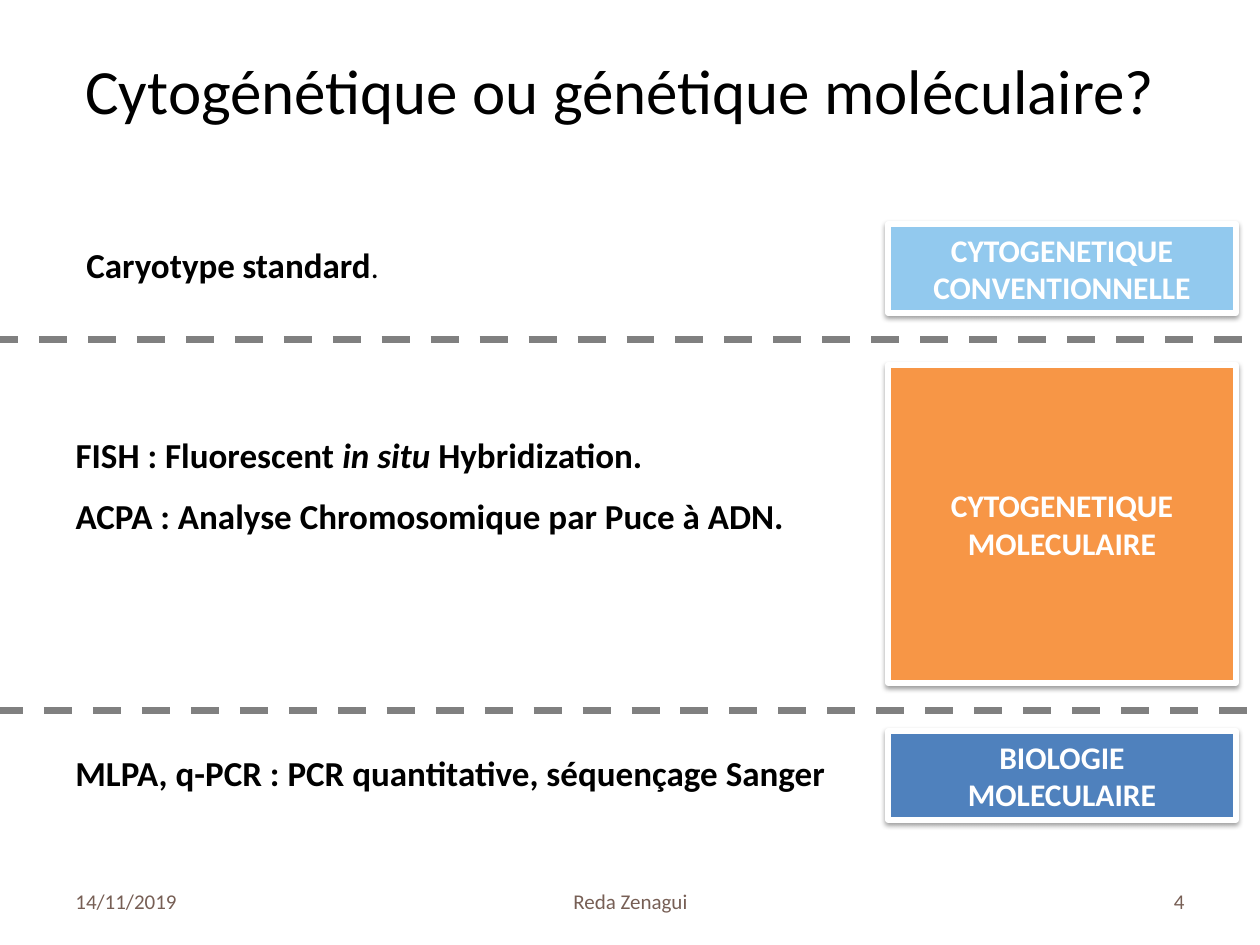
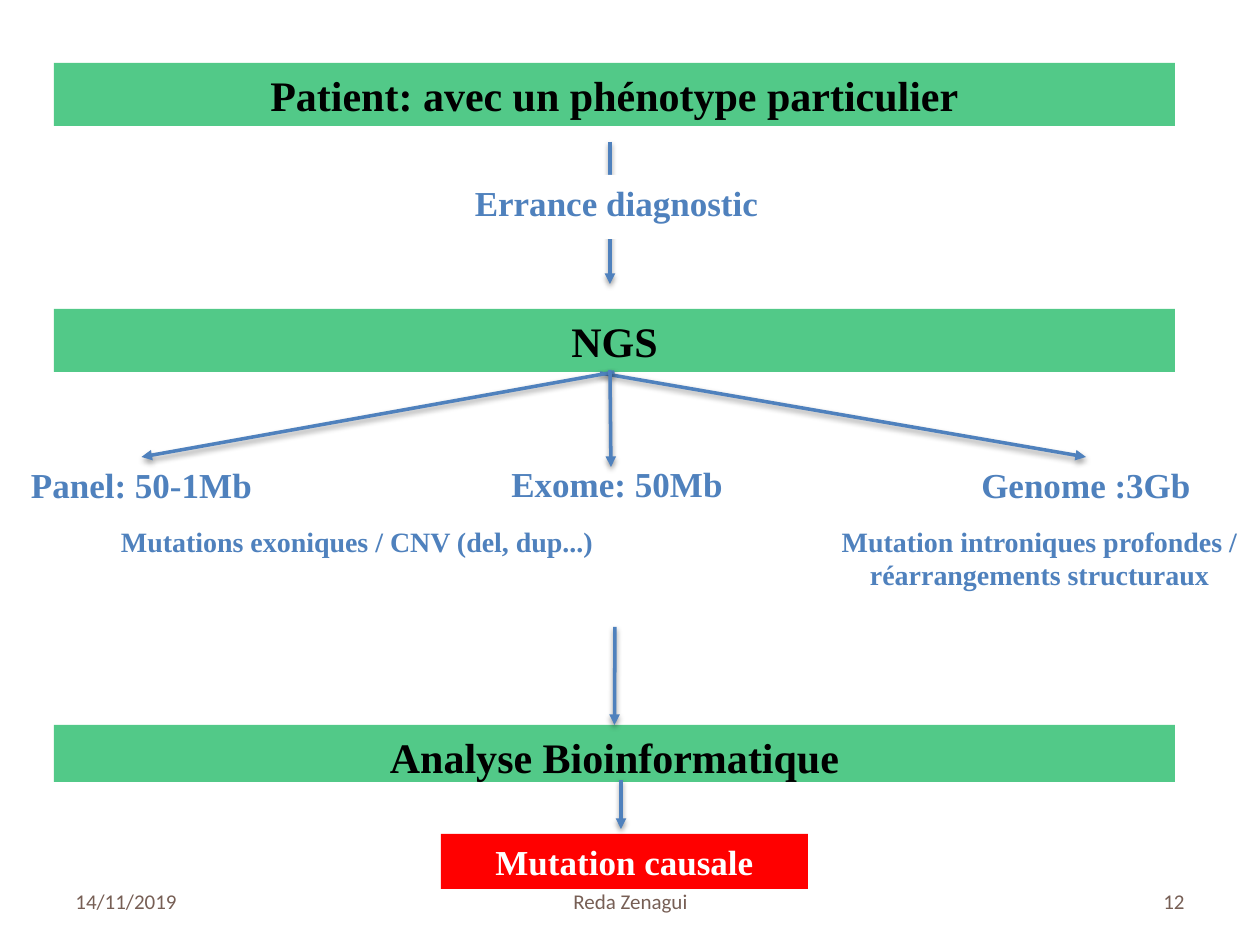
from pptx import Presentation
from pptx.dml.color import RGBColor
from pptx.enum.dml import MSO_LINE
from pptx.enum.shapes import MSO_CONNECTOR, MSO_SHAPE
from pptx.enum.text import MSO_ANCHOR, MSO_AUTO_SIZE, PP_ALIGN
from pptx.oxml import parse_xml
from pptx.oxml.ns import qn
from pptx.util import Pt
from lxml import etree

PX = 914400 / 126
RECT = MSO_SHAPE.RECTANGLE
LINE = MSO_CONNECTOR.STRAIGHT
DASH = MSO_LINE.DASH
TOP, MID = MSO_ANCHOR.TOP, MSO_ANCHOR.MIDDLE
LEFT, MIDST, RIGHT = PP_ALIGN.LEFT, PP_ALIGN.CENTER, PP_ALIGN.RIGHT
SANS, SERIF = "Calibri", "Times New Roman"
HUE = {
    "black": "000000", "white": "FFFFFF", "brown": "775F55", "sky": "92C9EE",
    "orange": "F79646", "blue": "4F81BD", "gray": "808080", "green": "00B050",
    "red": "FF0000",
}
NS = 'xmlns:a="http://schemas.openxmlformats.org/drawingml/2006/main"'
SHADE = (f'<a:effectLst {NS}><a:outerShdw blurRad="39370" dist="20320" dir="5400000" '
         'rotWithShape="0"><a:srgbClr val="000000"><a:alpha val="38000"/></a:srgbClr>'
         '</a:outerShdw></a:effectLst>')
PLAIN = f"<a:effectLst {NS}/>"


def write(box, rows, size, font, hue, side=MIDST, anchor=TOP, bold=True, gap=0):
    frame = box.text_frame
    frame.word_wrap = True
    frame.auto_size = MSO_AUTO_SIZE.NONE
    frame.vertical_anchor = anchor
    for i, row in enumerate(rows):
        para = frame.paragraphs[0] if i == 0 else frame.add_paragraph()
        para.alignment = side
        para.space_before = Pt(gap if i else 0)
        for part in [row] if isinstance(row, str) else row:
            text, look = (part, {}) if isinstance(part, str) else part
            run = para.add_run()
            run.text = text
            run.font.name = font
            run.font.size = Pt(look.get("size", size))
            run.font.bold = look.get("bold", bold)
            run.font.italic = look.get("italic", False)
            run.font.color.rgb = RGBColor.from_string(HUE[hue])


def draw(slide, ends, hue, width, effect):
    link = slide.shapes.add_connector(LINE, *[round(v * PX) for v in ends])
    link.line.color.rgb = RGBColor.from_string(HUE[hue])
    link.line.width = Pt(width)
    link._element.spPr.append(parse_xml(effect))
    return link


deck = Presentation()
deck.slide_width, deck.slide_height = round(1260 * PX), round(945 * PX)
tests = deck.slides.add_slide(deck.slide_layouts[1])
flow = deck.slides.add_slide(deck.slide_layouts[6])

for slide, page in ((tests, "4"), (flow, "12")):
    for x, w, text, side in ((63, 294, "14/11/2019", LEFT),
                             (431, 399, "Reda Zenagui", MIDST),
                             (903, 294, page, RIGHT)):
        box = slide.shapes.add_textbox(*[round(v * PX) for v in (x, 876, w, 50)])
        write(box, [text], 12, SANS, "brown", side, MID, False)

title, body = tests.placeholders
for box, spot in ((title, (53, 45, 1134, 158)), (body, (63, 427, 816, 117))):
    box.left, box.top, box.width, box.height = [round(v * PX) for v in spot]
write(title, ["Cytogénétique ou génétique moléculaire?"], 36, SANS, "black", bold=False)
write(body, [["FISH : Fluorescent ", ("in situ ", {"italic": True}), "Hybridization."],
             "ACPA : Analyse Chromosomique par Puce à ADN."],
      20, SANS, "black", LEFT, gap=11)
for para in body.text_frame.paragraphs:
    prop = para._p.get_or_add_pPr()
    prop.set("marL", "0")
    prop.set("indent", "0")
    etree.SubElement(prop, qn("a:buNone"))

for y, h, hue, rows in ((224, 89, "sky", ["CYTOGENETIQUE", "CONVENTIONNELLE"]),
                        (365, 318, "orange", ["CYTOGENETIQUE", "MOLECULAIRE"]),
                        (731, 89, "blue", ["BIOLOGIE", "MOLECULAIRE"])):
    box = tests.shapes.add_shape(RECT, *[round(v * PX) for v in (888, y, 348, h)])
    box.fill.solid()
    box.fill.fore_color.rgb = RGBColor.from_string(HUE[hue])
    box.line.color.rgb = RGBColor.from_string(HUE["white"])
    box.line.width = Pt(3)
    box._element.spPr.append(parse_xml(SHADE))
    write(box, rows, 18, SANS, "white", anchor=MID)

for x, y in ((-10, 340), (-5, 711)):
    draw(tests, (x, y, x + 1260, y), "gray", 4, PLAIN).line.dash_style = DASH

thin = {"size": 18, "bold": False}
for spot, row in (((74, 237, 476, 55), ["Caryotype", (" ", thin), "standard", (".", thin)]),
                  ((63, 745, 816, 55), "MLPA, q-PCR : PCR quantitative, séquençage Sanger")):
    box = tests.shapes.add_textbox(*[round(v * PX) for v in spot])
    write(box, [row], 20, SANS, "black", LEFT)

node = {}
for key, spot, size, text in (
        ("panel", (3, 457, 277, 55), 20, "Panel: 50-1Mb"),
        ("exome", (491, 456, 252, 55), 20, "Exome: 50Mb"),
        ("genome", (955, 457, 262, 55), 20, "Genome :3Gb"),
        ("deep", (819, 518, 441, 81), 16,
         "Mutation introniques profondes / réarrangements structuraux"),
        ("exons", (-30, 518, 774, 47), 16, "Mutations exoniques / CNV (del, dup...)")):
    node[key] = flow.shapes.add_textbox(*[round(v * PX) for v in spot])
    write(node[key], [text], size, SERIF, "blue")

bars = (
    ("patient", (54, 63, 1121, 63), "green", 24, "black",
     "Patient: avec un phénotype particulier"),
    ("ngs", (54, 309, 1121, 63), "green", 24, "black", "NGS"),
    ("analyse", (54, 725, 1121, 57), "green", 24, "black", "Analyse Bioinformatique"),
    ("cause", (441, 834, 367, 55), "red", 20, "white", "Mutation causale"),
    ("search", (335, 175, 563, 64), "white", 20, "blue", "Errance diagnostic"),
)
for key, spot, fill, size, ink, text in bars:
    if key == "search":
        entry = draw(flow, (610, 142, 610, 284), "blue", 2, SHADE)
    box = flow.shapes.add_shape(RECT, *[round(v * PX) for v in spot])
    box.shadow.inherit = False
    box.fill.solid()
    box.fill.fore_color.rgb = RGBColor.from_string(HUE[fill])
    box.line.fill.background()
    if fill == "green":
        tint = box._element.spPr.find(qn("a:solidFill"))[0]
        etree.SubElement(tint, qn("a:alpha"), val="68000")
    write(box, [text], size, SERIF, ink)
    node[key] = box

links = [entry]
for ends, start, stop in (((600, 373, 1087, 457), None, "genome"),
                          ((615, 627, 616, 725), None, "analyse"),
                          ((615, 373, 136, 456), "ngs", "panel"),
                          ((621, 780, 621, 829), None, None),
                          ((610, 370, 611, 467), None, None)):
    link = draw(flow, ends, "blue", 2, SHADE)
    if start:
        link.begin_connect(node[start], 2)
    if stop:
        link.end_connect(node[stop], 0)
    links.append(link)
for link in links:
    etree.SubElement(link.line._get_or_add_ln(), qn("a:tailEnd"), type="triangle")

deck.save("out.pptx")
